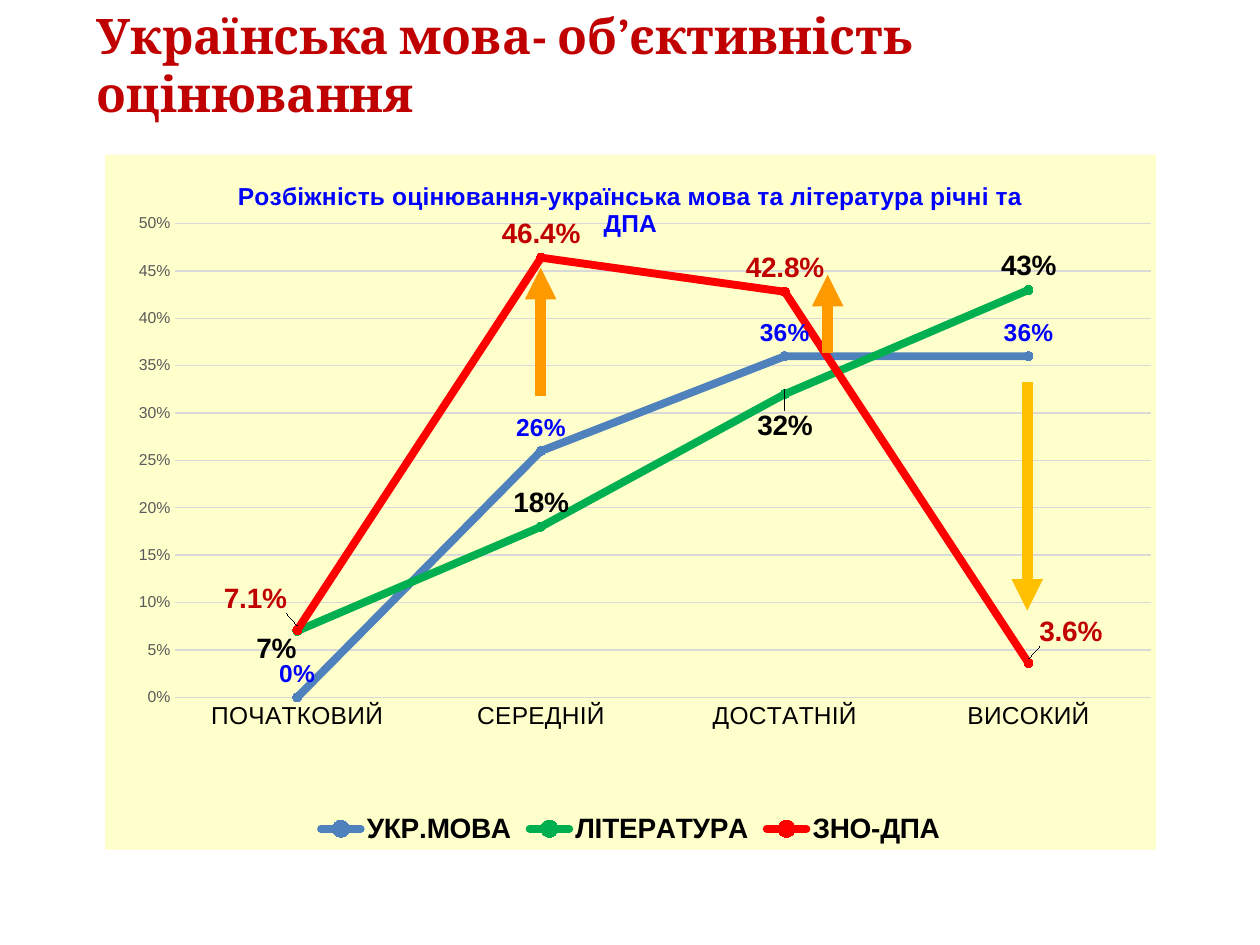
from lxml import etree
from pptx import Presentation
from pptx.chart import data as chart_data
from pptx.dml.color import RGBColor
from pptx.enum import chart as ch, shapes, text
from pptx.oxml import parse_xml
from pptx.oxml.ns import nsdecls, qn
from pptx.util import Pt

COLORS = {
    "title": "C00000", "heading": "0000FF", "panel": "FFFFCC",
    "grid": "D9D9D9", "scale": "595959", "ink": "000000",
    "language": "4F81BD", "literature": "00B050", "exam": "FF0000",
    "rise": "FF9900", "fall": "FFC000",
}
LEVELS = ["ПОЧАТКОВИЙ", "СЕРЕДНІЙ", "ДОСТАТНІЙ", "ВИСОКИЙ"]
SUBJECTS = [
    dict(name="УКР.МОВА", values=[0, 0.26, 0.36, 0.36], line="language",
         label="heading", size=14, number="0%", shifts={}),
    dict(name="ЛІТЕРАТУРА", values=[0.07, 0.18, 0.32, 0.43], line="literature",
         label="ink", size=16, number="0%", shifts={0: (-0.02, 0.06), 2: (0, 0.08)}),
    dict(name="ЗНО-ДПА", values=[0.071, 0.464, 0.428, 0.036], line="exam",
         label="title", size=16, number="0.0%",
         shifts={0: (-0.04, -0.01), 3: (0.04, -0.01)}),
]
ARROWS = [
    (249, 138, 64.5, "rise"),
    (413, 113.5, 68.5, "rise"),
    (527, 130, 260.5, "fall"),
]


def rgb(key):
    return RGBColor.from_string(COLORS[key])


def style(font, color, size, bold=False, name="Arial"):
    for attribute, value in dict(name=name, size=Pt(size), bold=bold).items():
        setattr(font, attribute, value)
    font.color.rgb = rgb(color)


def place(part, box):
    for attribute, value in zip(("left", "top", "width", "height"), box):
        setattr(part, attribute, Pt(value))


def manual_layout(**values):
    parts = "".join(f'<c:{tag} val="{value}"/>' for tag, value in values.items())
    return parse_xml(f'<c:layout {nsdecls("c")}><c:manualLayout>{parts}'
                     '</c:manualLayout></c:layout>')


def add_title(slide, box):
    title = slide.shapes.title
    place(title, box)
    frame = title.text_frame
    frame.text = "Українська мова- об’єктивність оцінювання"
    settings = dict(word_wrap=True, auto_size=text.MSO_AUTO_SIZE.NONE,
                    vertical_anchor=text.MSO_ANCHOR.MIDDLE)
    for attribute, value in settings.items():
        setattr(frame, attribute, value)
    heading = frame.paragraphs[0]
    heading.alignment = text.PP_ALIGN.LEFT
    style(heading.runs[0].font, "title", 28, True, "Cambria")


def format_subject(series, subject):
    color = rgb(subject["line"])
    series.smooth = False
    series.format.line.width = Pt(4.5)
    series.format.line.color.rgb = color
    series.format.line._get_or_add_ln().set("cap", "rnd")
    marker = series.marker
    marker.style, marker.size = ch.XL_MARKER_STYLE.CIRCLE, 5
    marker.format.fill.solid()
    marker.format.fill.fore_color.rgb = color
    marker.format.line.color.rgb = color

    labels = series.data_labels
    settings = dict(show_value=True, position=ch.XL_LABEL_POSITION.ABOVE,
                    number_format=subject["number"], number_format_is_linked=False)
    for attribute, value in settings.items():
        setattr(labels, attribute, value)
    style(labels.font, subject["label"], subject["size"], True)
    for index, (x, y) in subject["shifts"].items():
        label = series.points[index].data_label
        style(label.font, subject["label"], subject["size"], True)
        label.position = ch.XL_LABEL_POSITION.ABOVE
        entry = next(e for e in labels._element.findall(qn("c:dLbl"))
                     if e.find(qn("c:idx")).get("val") == str(index))
        entry.insert(1, manual_layout(x=x, y=y))
        entry.insert(2, parse_xml(f'<c:numFmt {nsdecls("c")} '
                                  f'formatCode="{subject["number"]}" sourceLinked="0"/>'))


def format_axes(chart):
    levels, shares = chart.category_axis, chart.value_axis
    for axis, color, size in ((levels, "ink", 14), (shares, "scale", 9)):
        axis.major_tick_mark = axis.minor_tick_mark = ch.XL_TICK_MARK.NONE
        style(axis.tick_labels.font, color, size)
    shares.has_major_gridlines = True
    for line in (levels.format.line, shares.major_gridlines.format.line):
        line.width = Pt(0.75)
        line.color.rgb = rgb("grid")
    shares.format.line.fill.background()
    for attribute, value in dict(minimum_scale=0, maximum_scale=0.5,
                                 major_unit=0.05).items():
        setattr(shares, attribute, value)
    shares.tick_labels.number_format = "0%"
    shares.tick_labels.number_format_is_linked = False


def add_results_chart(slide, box):
    results = chart_data.CategoryChartData(number_format="0.0%")
    results.categories = LEVELS
    for subject in SUBJECTS:
        results.add_series(subject["name"], subject["values"])
    chart = slide.shapes.add_chart(ch.XL_CHART_TYPE.LINE_MARKERS,
                                   *map(Pt, box), results).chart
    style(chart.font, "ink", 10)
    chart.has_title = True
    heading = chart.chart_title.text_frame
    heading.text = "Розбіжність оцінювання-українська мова та література річні та ДПА"
    style(heading.paragraphs[0].runs[0].font, "heading", 14, True)
    chart.has_legend = True
    chart.legend.position = ch.XL_LEGEND_POSITION.BOTTOM
    chart.legend.include_in_layout = False
    style(chart.legend.font, "ink", 16, True)
    format_axes(chart)
    chart.plots[0].vary_by_categories = False
    for series, subject in zip(chart.plots[0].series, SUBJECTS):
        format_subject(series, subject)

    space = chart._chartSpace
    space.find(qn("c:chart")).addnext(parse_xml(
        f'<c:spPr {nsdecls("c", "a")}><a:solidFill><a:srgbClr val="{COLORS["panel"]}"/>'
        '</a:solidFill><a:ln><a:noFill/></a:ln></c:spPr>'))
    plot_area = space.find(f'{qn("c:chart")}/{qn("c:plotArea")}')
    for layout in plot_area.findall(qn("c:layout")):
        plot_area.remove(layout)
    plot_area.insert(0, manual_layout(layoutTarget="inner", xMode="edge", yMode="edge",
                                      x=0.067, y=0.099, w=0.928, h=0.682))


def add_arrows(slide, box):
    left, top = box[:2]
    for x, start, end, color in ARROWS:
        arrow = slide.shapes.add_connector(
            shapes.MSO_CONNECTOR.STRAIGHT,
            *map(Pt, (left + x, top + start, left + x, top + end)))
        arrow.line.width = Pt(6)
        arrow.line.color.rgb = rgb(color)
        etree.SubElement(arrow.line._get_or_add_ln(), qn("a:tailEnd"), type="triangle")
        etree.SubElement(arrow._element.spPr, qn("a:effectLst"))


def main():
    deck = Presentation()
    deck.slide_width, deck.slide_height = Pt(720), Pt(540)
    slide = deck.slides.add_slide(deck.slide_layouts[5])
    chart_box = (60, 88.5, 600.5, 397)
    add_title(slide, (48, 9.5, 612, 54))
    add_results_chart(slide, chart_box)
    add_arrows(slide, chart_box)
    deck.save("out.pptx")


if __name__ == "__main__":
    main()
